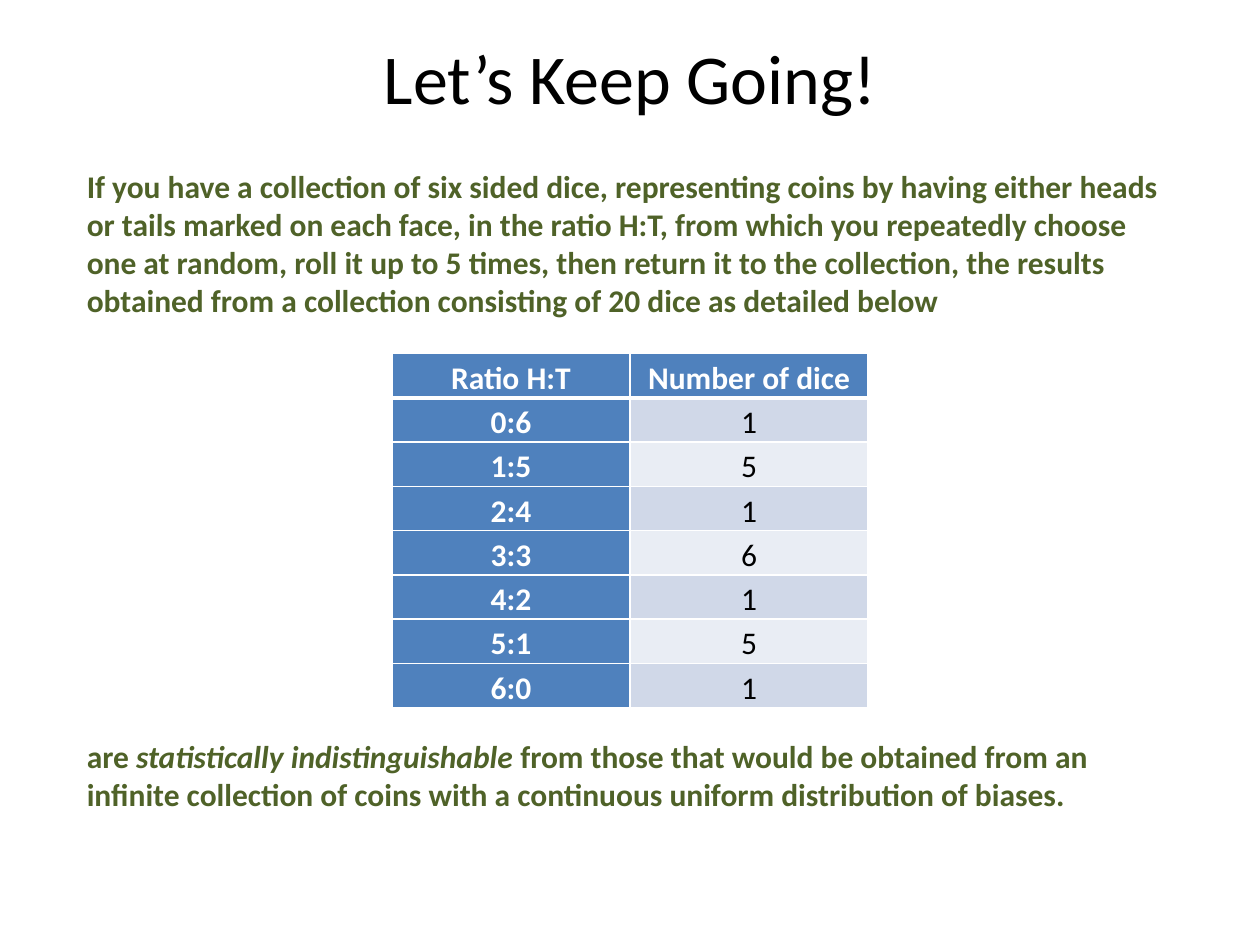
from lxml.etree import SubElement
from pptx import Presentation
from pptx.dml.color import RGBColor
from pptx.enum.text import MSO_ANCHOR as Anchor, MSO_AUTO_SIZE as AutoSize, PP_ALIGN as Align
from pptx.oxml.ns import qn
from pptx.util import Cm, Pt

BLACK = RGBColor(0x00, 0x00, 0x00)
WHITE = RGBColor(0xFF, 0xFF, 0xFF)
GREEN = RGBColor(0x4F, 0x62, 0x28)
BLUE = RGBColor(0x4F, 0x81, 0xBD)
BAND_DARK = RGBColor(0xD0, 0xD8, 0xE8)
BAND_LIGHT = RGBColor(0xE9, 0xED, 0xF4)

DICE = [
    ("Ratio H:T", "Number of dice"),
    ("0:6", "1"),
    ("1:5", "5"),
    ("2:4", "1"),
    ("3:3", "6"),
    ("4:2", "1"),
    ("5:1", "5"),
    ("6:0", "1"),
]
INTRO = (
    "If you have a collection of six sided dice, representing coins by having "
    "either heads or tails marked on each face, in the ratio H:T, from which you "
    "repeatedly choose one at random, roll it up to 5 times, then return it to the "
    "collection, the results obtained from a collection consisting of 20 dice as "
    "detailed below"
)
CONCLUSION_END = (
    " from those that would be obtained from an infinite collection of coins "
    "with a continuous uniform distribution of biases."
)


def add_span(para, text, size=18, color=GREEN, bold=True, italic=False):
    span = para.add_run()
    span.text = text
    font = span.font
    font.name = "Calibri"
    font.size = Pt(size)
    font.color.rgb = color
    font.bold = bold
    font.italic = italic


def add_title(page, text):
    title = page.shapes.title
    title.left, title.top, title.width, title.height = Cm(1.27), Cm(0.15), Cm(22.86), Cm(2.77)
    title.text_frame.vertical_anchor = Anchor.MIDDLE
    para = title.text_frame.paragraphs[0]
    para.alignment = Align.CENTER
    add_span(para, text, size=40, color=BLACK, bold=False)


def add_text(page, top, height):
    box = page.shapes.add_textbox(Cm(1.5), top, Cm(22.2), height)
    frame = box.text_frame
    frame.word_wrap = True
    frame.auto_size = AutoSize.SHAPE_TO_FIT_TEXT
    frame.vertical_anchor = Anchor.MIDDLE
    return frame.paragraphs[0]


def set_borders(cell, widths):
    properties = cell._tc.get_or_add_tcPr()
    for side, width in widths.items():
        line = SubElement(properties, qn(f"a:ln{side}"), w=str(Pt(width)))
        fill = SubElement(line, qn("a:solidFill"))
        SubElement(fill, qn("a:srgbClr"), val=str(WHITE))


def format_cell(cell, text, fill, color, bold, top, bottom):
    set_borders(cell, {"L": 1, "R": 1, "T": top, "B": bottom})
    cell.fill.solid()
    cell.fill.fore_color.rgb = fill
    cell.margin_left = cell.margin_right = Cm(0.18)
    cell.margin_top = cell.margin_bottom = Cm(0)
    para = cell.text_frame.paragraphs[0]
    para.alignment = Align.CENTER
    para.line_spacing = 1.15
    add_span(para, text, color=color, bold=bold)


def add_dice_table(page):
    frame = page.shapes.add_table(len(DICE), 2, Cm(7.9), Cm(7.13), Cm(9.6), Cm(0.83) * len(DICE))
    table = frame.table
    table.first_col = True
    for row, values in enumerate(DICE):
        for column, text in enumerate(values):
            heading = row == 0 or column == 0
            band = BAND_DARK if row % 2 else BAND_LIGHT
            format_cell(
                table.cell(row, column),
                text,
                fill=BLUE if heading else band,
                color=WHITE if heading else BLACK,
                bold=heading,
                top=3 if row == 1 else 1,
                bottom=3 if row == 0 else 1,
            )


def main():
    deck = Presentation()
    deck.slide_width, deck.slide_height = Cm(25.4), Cm(19.05)
    page = deck.slides.add_slide(deck.slide_layouts[5])
    add_title(page, "Let’s Keep Going!")
    add_dice_table(page)
    add_span(add_text(page, Cm(3.23), Cm(3.33)), INTRO)
    conclusion = add_text(page, Cm(14.73), Cm(1.8))
    add_span(conclusion, "are ")
    add_span(conclusion, "statistically indistinguishable", italic=True)
    add_span(conclusion, CONCLUSION_END)
    deck.save("out.pptx")


if __name__ == "__main__":
    main()
